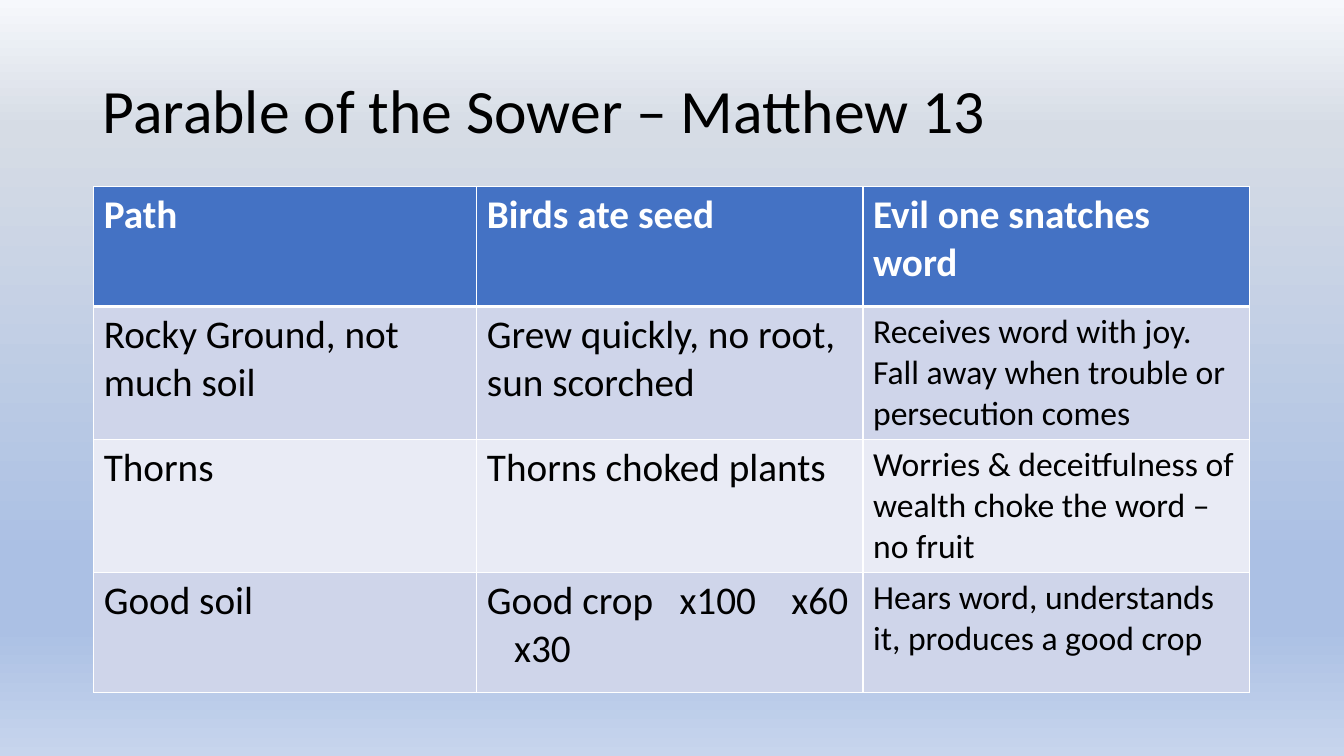
import pptx
import pptx.dml.color
import pptx.enum.text
import pptx.oxml
import pptx.oxml.ns
import pptx.util
from lxml import etree

Inches = pptx.util.Inches
Pt = pptx.util.Pt
qn = pptx.oxml.ns.qn

COLORS = {
    "text": "000000",
    "white": "FFFFFF",
    "header": "4472C4",
    "odd_row": "CFD5EA",
    "even_row": "E9EBF5",
}
BACKGROUND_STOPS = [
    (0, "F6F8FC"),
    (17, "D6DCE5"),
    (74, "ABC0E4"),
    (83, "ABC0E4"),
    (100, "C7D5ED"),
]
SOIL_ROWS = [
    ["Path", "Birds ate seed", "Evil one snatches word"],
    [
        "Rocky Ground, not much soil",
        "Grew quickly, no root, sun scorched",
        "Receives word with joy. Fall away when trouble or persecution comes",
    ],
    [
        "Thorns",
        "Thorns choked plants",
        "Worries & deceitfulness of wealth choke the word – no fruit",
    ],
    [
        "Good soil",
        "Good crop\tx100\tx60\v\tx30",
        "Hears word, understands it, produces a good crop",
    ],
]
CROP_TABS = [0.27, 1.91, 3.02]


def write_text(text_frame, text, size, color="text", bold=False, spacing=None, tabs=()):
    paragraph = text_frame.paragraphs[0]
    paragraph.text = text
    paragraph.alignment = pptx.enum.text.PP_ALIGN.LEFT
    if spacing:
        paragraph.line_spacing = spacing
    if tabs:
        properties = paragraph._p.get_or_add_pPr()
        tab_list = etree.SubElement(properties, qn("a:tabLst"))
        for position in tabs:
            etree.SubElement(tab_list, qn("a:tab"), pos=str(Inches(position)), algn="l")
    for run in paragraph.runs:
        run.font.name = "Calibri"
        run.font.size = Pt(size)
        run.font.bold = bold
        run.font.color.rgb = pptx.dml.color.RGBColor.from_string(COLORS[color])


class SlideBuilder:
    def __init__(self, presentation):
        self.slide = presentation.slides.add_slide(presentation.slide_layouts[5])

    def background(self, stops):
        fill = self.slide.background.fill
        fill.gradient()
        fill.gradient_angle = 270
        stop_list = next(self.slide.element.iter(qn("a:gsLst")))
        for stop in list(stop_list):
            stop_list.remove(stop)
        for percent, color in stops:
            stop = etree.SubElement(stop_list, qn("a:gs"), pos=str(percent * 1000))
            etree.SubElement(stop, qn("a:srgbClr"), val=color)

    def title(self, text, left, top, width, height):
        shape = self.slide.shapes.title
        shape.left, shape.top = Inches(left), Inches(top)
        shape.width, shape.height = Inches(width), Inches(height)
        shape.text_frame.word_wrap = True
        shape.text_frame.vertical_anchor = pptx.enum.text.MSO_ANCHOR.MIDDLE
        write_text(shape.text_frame, text, size=44, spacing=0.9)

    def borders(self, cell, top, bottom):
        properties = cell._tc.get_or_add_tcPr()
        for side, points in (("L", 1), ("R", 1), ("T", top), ("B", bottom)):
            line = etree.SubElement(properties, qn(f"a:ln{side}"), w=str(Pt(points)))
            fill = etree.SubElement(line, qn("a:solidFill"))
            etree.SubElement(fill, qn("a:srgbClr"), val=COLORS["white"])

    def table(self, rows, left, top, column_widths, row_height):
        frame = self.slide.shapes.add_table(
            len(rows), len(column_widths), Inches(left), Inches(top),
            Inches(sum(column_widths)), Inches(row_height * len(rows)),
        )
        table = frame.table
        table.horz_banding = False
        for column, width in zip(table.columns, column_widths):
            column.width = Inches(width)
        for row_index, texts in enumerate(rows):
            table.rows[row_index].height = Inches(row_height)
            header = row_index == 0
            band = "header" if header else "odd_row" if row_index % 2 else "even_row"
            for column_index, text in enumerate(texts):
                cell = table.cell(row_index, column_index)
                self.borders(cell, 3 if row_index == 1 else 1, 3 if header else 1)
                cell.fill.solid()
                cell.fill.fore_color.rgb = pptx.dml.color.RGBColor.from_string(COLORS[band])
                write_text(
                    cell.text_frame,
                    text,
                    size=24 if column_index == 2 and not header else 28,
                    color="white" if header else "text",
                    bold=header,
                    tabs=CROP_TABS if "\t" in text else (),
                )


def main():
    presentation = pptx.Presentation()
    presentation.slide_width = Inches(13.33)
    presentation.slide_height = Inches(7.5)
    builder = SlideBuilder(presentation)
    builder.background(BACKGROUND_STOPS)
    builder.title("Parable of the Sower – Matthew 13", 0.92, 0.4, 11.5, 1.45)
    builder.table(SOIL_ROWS, 0.93, 1.85, [3.8, 3.83, 3.83], 1.19)
    presentation.save("out.pptx")


if __name__ == "__main__":
    main()
